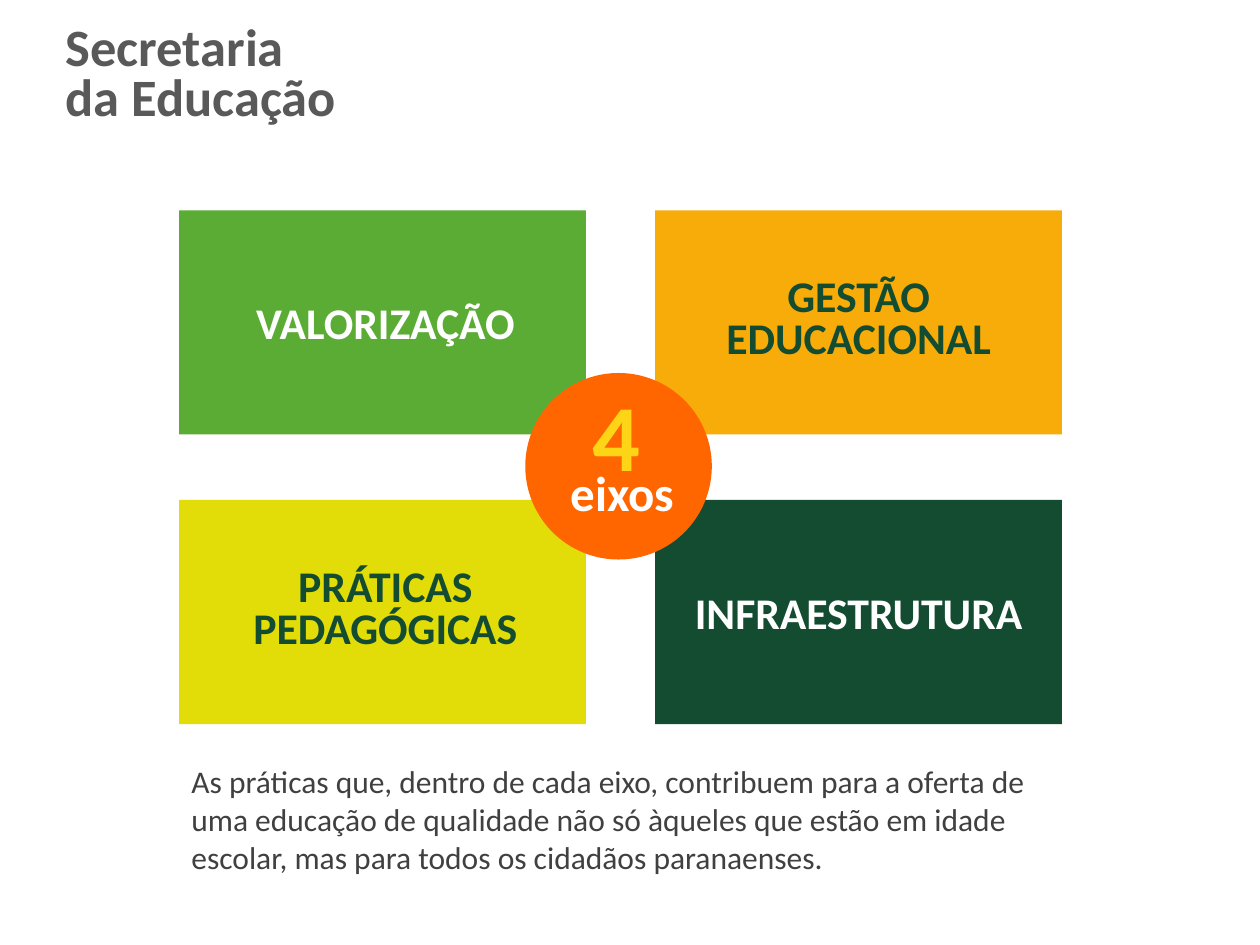
from pptx import Presentation
from pptx.dml.color import RGBColor
from pptx.enum.shapes import MSO_SHAPE
from pptx.enum.text import MSO_ANCHOR, MSO_AUTO_SIZE, PP_ALIGN
from pptx.util import Cm, Pt

RECT, OVAL = MSO_SHAPE.RECTANGLE, MSO_SHAPE.OVAL
LEFT, MID = PP_ALIGN.LEFT, PP_ALIGN.CENTER

HUES = {
    "gray": "595959", "ink": "404040", "white": "FFFFFF", "green": "5BAC35",
    "amber": "F8AC09", "lime": "E2DD09", "forest": "134C30",
    "orange": "FF6600", "yellow": "FED417",
}

TITLE = "Secretaria\vda Educação"
# label, fill, text colour, label width, label height, line spacing
AXES = [
    ("VALORIZAÇÃO", "green", "white", 6.4, 1.32, 1.0),
    ("GESTÃO EDUCACIONAL", "amber", "forest", 6.58, 2.0, 0.8),
    ("PRÁTICAS PEDAGÓGICAS", "lime", "forest", 6.4, 2.0, 0.8),
    ("INFRAESTRUTURA", "forest", "white", 7.75, 1.32, 1.0),
]
NOTE = ("As práticas que, dentro de cada eixo, contribuem para a oferta de "
        "uma educação de qualidade não só àqueles que estão em idade "
        "escolar, mas para todos os cidadãos paranaenses.")
# text, colour, size, box
HUB = [
    ("4", "yellow", 54, (11.68, 7.47, 1.5, 2.57)),
    ("eixos", "white", 28, (11.23, 9.2, 2.64, 1.22)),
]

GRID_X, GRID_Y = 3.61, 4.24
CARD_W, CARD_H = 8.2, 4.52
STEP_X, STEP_Y = 9.6, 5.84
NUDGE = (0.06, 0)  # shift of the labels in each column
DISC = (10.59, 7.52, 3.76, 3.76)


def color(name):
    return RGBColor.from_string(HUES[name])


def write(frame, text, hue, size, bold=True, align=MID, space=1.0):
    para = frame.paragraphs[0]
    para.text = text
    para.alignment, para.line_spacing = align, space
    look = {"name": "Calibri", "size": Pt(size), "bold": bold}
    for run in para.runs:
        for key, value in look.items():
            setattr(run.font, key, value)
        run.font.color.rgb = color(hue)


def add_text(slide, box, *args, wrap=True, **kwargs):
    frame = slide.shapes.add_textbox(*map(Cm, box)).text_frame
    frame.word_wrap = wrap
    write(frame, *args, **kwargs)


def add_block(slide, kind, box, hue):
    block = slide.shapes.add_shape(kind, *map(Cm, box))
    block.shadow.inherit = False
    block.fill.solid()
    block.fill.fore_color.rgb = color(hue)
    block.line.fill.background()


def add_title(slide):
    title = slide.shapes.title
    title.left, title.top, title.width, title.height = map(
        Cm, (1.07, 0.28, 7.85, 2.51))
    frame = title.text_frame
    frame.auto_size = MSO_AUTO_SIZE.NONE
    frame.vertical_anchor = MSO_ANCHOR.MIDDLE
    write(frame, TITLE, "gray", 30, align=LEFT, space=0.8)


def add_axes(slide):
    for i, (text, fill, hue, wide, high, space) in enumerate(AXES):
        row, col = divmod(i, 2)
        x, y = GRID_X + col * STEP_X, GRID_Y + row * STEP_Y
        add_block(slide, RECT, (x, y, CARD_W, CARD_H), fill)
        box = (x + (CARD_W - wide) / 2 + NUDGE[col],
               y + (CARD_H - high) / 2, wide, high)
        add_text(slide, box, text, hue, 25, space=space)


def main():
    deck = Presentation()
    deck.slide_width, deck.slide_height = Cm(25.4), Cm(19.05)
    slide = deck.slides.add_slide(deck.slide_layouts[5])
    add_title(slide)
    add_axes(slide)
    add_text(slide, (GRID_X, 15.24, 17.8, 2.57), NOTE, "ink", 18,
             bold=False, align=LEFT)
    add_block(slide, OVAL, DISC, "orange")
    for text, hue, size, box in HUB:
        add_text(slide, box, text, hue, size, wrap=False)
    deck.save("out.pptx")


if __name__ == "__main__":
    main()
